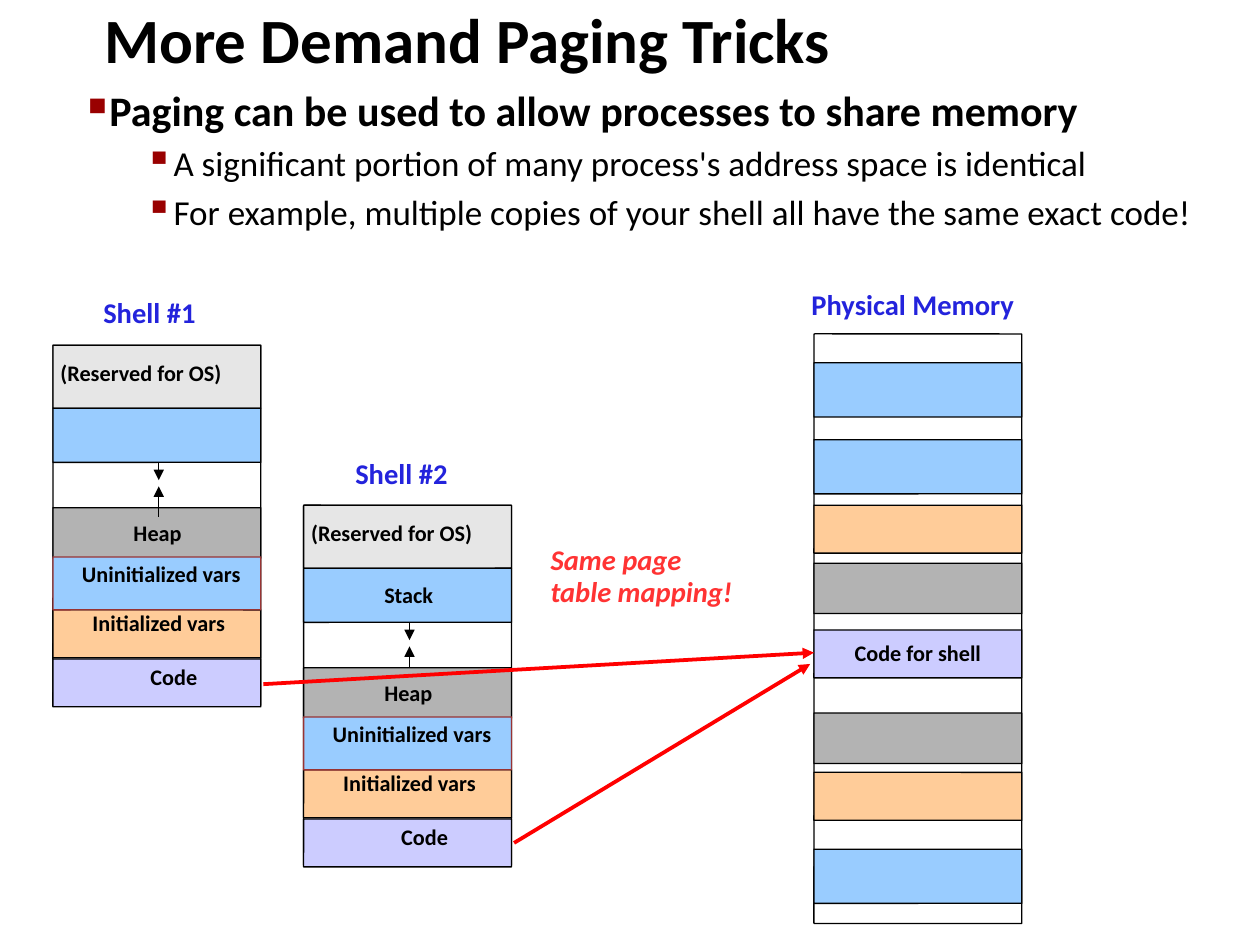
from lxml.etree import SubElement
from pptx import Presentation
from pptx.dml.color import RGBColor
from pptx.enum.shapes import MSO_CONNECTOR, MSO_SHAPE
from pptx.enum.text import MSO_ANCHOR, PP_ALIGN
from pptx.oxml.ns import qn
from pptx.util import Inches, Pt

BLACK, BLUE, RED, MAROON = "000000", "2323DC", "FF0000", "993333"
SKY, PEACH, GREY, LILAC, PALE = "99CCFF", "FFCC99", "B3B3B3", "CCCCFF", "E6E6E6"
LEFT, CENTER = PP_ALIGN.LEFT, PP_ALIGN.CENTER
BAND_WIDTH = 1.65

TITLE = {"size": Pt(36), "bold": True}
POINT = {"size": Pt(24), "bold": True}
SUBPOINT = {"size": Pt(20), "bold": False}
LABEL = {"size": Pt(12.7), "bold": True}
HEADING = {"size": Pt(16.3), "bold": True}
REMARK = {"size": Pt(16.3), "bold": True, "italic": True}


def rgb(color):
    return RGBColor.from_string(color)


class Deck:
    def __init__(self, font):
        self.font = font
        self.prs = Presentation()
        self.prs.slide_width, self.prs.slide_height = Inches(10), Inches(7.5)
        self.slide = self.prs.slides.add_slide(self.prs.slide_layouts[6])

    def add_words(self, paragraph, words, style, color=BLACK, align=LEFT, spacing=0.94):
        paragraph.alignment, paragraph.line_spacing = align, spacing
        run = paragraph.add_run()
        run.text = words
        run.font.name = self.font
        run.font.color.rgb = rgb(color)
        for name, value in style.items():
            setattr(run.font, name, value)

    def frame(self, shape, inset=0, anchor=MSO_ANCHOR.TOP):
        frame = shape.text_frame
        margins = {"margin_left": inset, "margin_right": inset,
                   "margin_top": inset / 2, "margin_bottom": inset / 2}
        for name, value in margins.items():
            setattr(frame, name, Inches(value))
        frame.word_wrap, frame.vertical_anchor = True, anchor
        return frame

    def text(self, box, lines, style, color=BLACK, align=LEFT, **layout):
        shape = self.slide.shapes.add_textbox(*map(Inches, box))
        frame = self.frame(shape, **layout)
        for index, line in enumerate(lines.split("\n")):
            paragraph = frame.add_paragraph() if index else frame.paragraphs[0]
            self.add_words(paragraph, line, style, color, align)

    def bullets(self, box, points):
        frame = self.frame(self.slide.shapes.add_textbox(*map(Inches, box)), 0.1)
        for index, (words, style, level, margin, hang, mark, scale) in enumerate(points):
            paragraph = frame.add_paragraph() if index else frame.paragraphs[0]
            self.add_words(paragraph, words, style, spacing=1.0)
            paragraph.level = level
            paragraph.space_before = Pt(style["size"].pt * 0.2)
            props = paragraph._p.get_or_add_pPr()
            props.set("marL", str(Inches(margin)))
            props.set("indent", str(-Inches(hang)))
            tint = SubElement(props, qn("a:buClr"))
            SubElement(tint, qn("a:srgbClr"), val="990000")
            SubElement(props, qn("a:buSzPct"), val=str(scale * 1000))
            SubElement(props, qn("a:buChar"), char=mark)

    def band(self, left, top, height, fill=None, line=BLACK, label=None):
        shape = self.slide.shapes.add_shape(
            MSO_SHAPE.ROUNDED_RECTANGLE,
            *map(Inches, (left, top, BAND_WIDTH, height)))
        shape.adjustments[0] = 0.004
        shape.shadow.inherit = False
        if fill:
            shape.fill.solid()
            shape.fill.fore_color.rgb = rgb(fill)
        else:
            shape.fill.background()
        shape.line.color.rgb = rgb(line)
        shape.line.width = Pt(0.75)
        if label:
            frame = self.frame(shape, anchor=MSO_ANCHOR.MIDDLE)
            self.add_words(frame.paragraphs[0], label, LABEL, align=CENTER)

    def arrow(self, start, end, color=BLACK, width=0.75):
        line = self.slide.shapes.add_connector(
            MSO_CONNECTOR.STRAIGHT, *map(Inches, (*start, *end)))
        line.line.color.rgb = rgb(color)
        line.line.width = Pt(width)
        SubElement(line.line._get_or_add_ln(), qn("a:tailEnd"), type="triangle")
        SubElement(line._element.spPr, qn("a:effectLst"))


# Segments of a process: top, height, fill, line, label, label x, y, width, align
SEGMENTS = [
    (1.29, 0.40, GREY, BLACK, "Heap", 0.64, 1.40, 0.46, LEFT),
    (2.49, 0.38, LILAC, BLACK, "Code", 0.42, 2.54, 1.08, CENTER),
    (2.10, 0.38, PEACH, BLACK, "Initialized vars", 0.28, 2.11, 1.12, CENTER),
    (1.68, 0.42, SKY, MAROON, "Uninitialized vars", 0.20, 1.72, 1.32, CENTER),
    (0.00, 0.50, PALE, BLACK, "(Reserved for OS)", 0.06, 0.13, 1.52, LEFT),
    (0.50, 0.43, SKY, BLACK, "Stack", 0.64, 0.62, 0.47, LEFT),
]


def draw_process(deck, left, top, heap_arrow_start, unlabelled=()):
    deck.band(left, top, 2.86)
    for y, height, fill, line, label, label_x, label_y, width, align in SEGMENTS:
        deck.band(left, top + y, height, fill, line)
        if label not in unlabelled:
            deck.text((left + label_x, top + label_y, width, 0.21), label, LABEL, align=align)
    # Stack grows down, heap grows up
    middle = left + 0.84
    for start, end in ((0.93, 1.07), (heap_arrow_start, 1.12)):
        deck.arrow((middle, top + start), (middle, top + end))


def main():
    deck = Deck("Calibri")

    # Title and points
    deck.text((0.73, 0.08, 8.54, 0.51), "More Demand Paging Tricks", TITLE,
              inset=0.1, anchor=MSO_ANCHOR.MIDDLE)
    sub = (SUBPOINT, 1, 0.74, 0.18, "▪", 110)
    deck.bullets((0.49, 0.62, 9.31, 4.73), [
        ("Paging can be used to allow processes to share memory",
         POINT, 0, 0.28, 0.17, "■", 60),
        ("A significant portion of many process's address space is identical", *sub),
        ("For example, multiple copies of your shell all have the same exact code!", *sub),
    ])

    # Two shell processes
    draw_process(deck, 0.42, 2.74, 1.36, unlabelled=("Stack",))
    draw_process(deck, 2.41, 4.01, 1.29)

    # Physical memory
    memory_left = 6.46
    deck.band(memory_left, 2.65, 4.68)
    frames = {SKY: (0.43, (2.88, 3.49, 6.74)),
              PEACH: (0.38, (4.01, 6.13)),
              GREY: (0.40, (4.47, 5.66))}
    for fill, (height, tops) in frames.items():
        for top in tops:
            deck.band(memory_left, top, height, fill)
    deck.band(memory_left, 5, 0.38, LILAC, label="Code for shell")

    # Headings
    for left, top, width, words in ((0.82, 2.36, 1.1, "Shell #1"),
                                    (2.82, 3.64, 0.93, "Shell #2"),
                                    (6.44, 2.30, 2.3, "Physical Memory")):
        deck.text((left, top, width, 0.26), words, HEADING, BLUE)

    # Shared mapping
    deck.arrow((2.09, 5.43), (6.46, 5.18), RED, 2.15)
    deck.arrow((4.08, 6.69), (6.43, 5.27), RED, 2.15)
    deck.text((4.37, 4.32, 1.72, 0.53), "Same page\ntable mapping!", REMARK, "FF3333")

    deck.prs.save("out.pptx")


if __name__ == "__main__":
    main()
